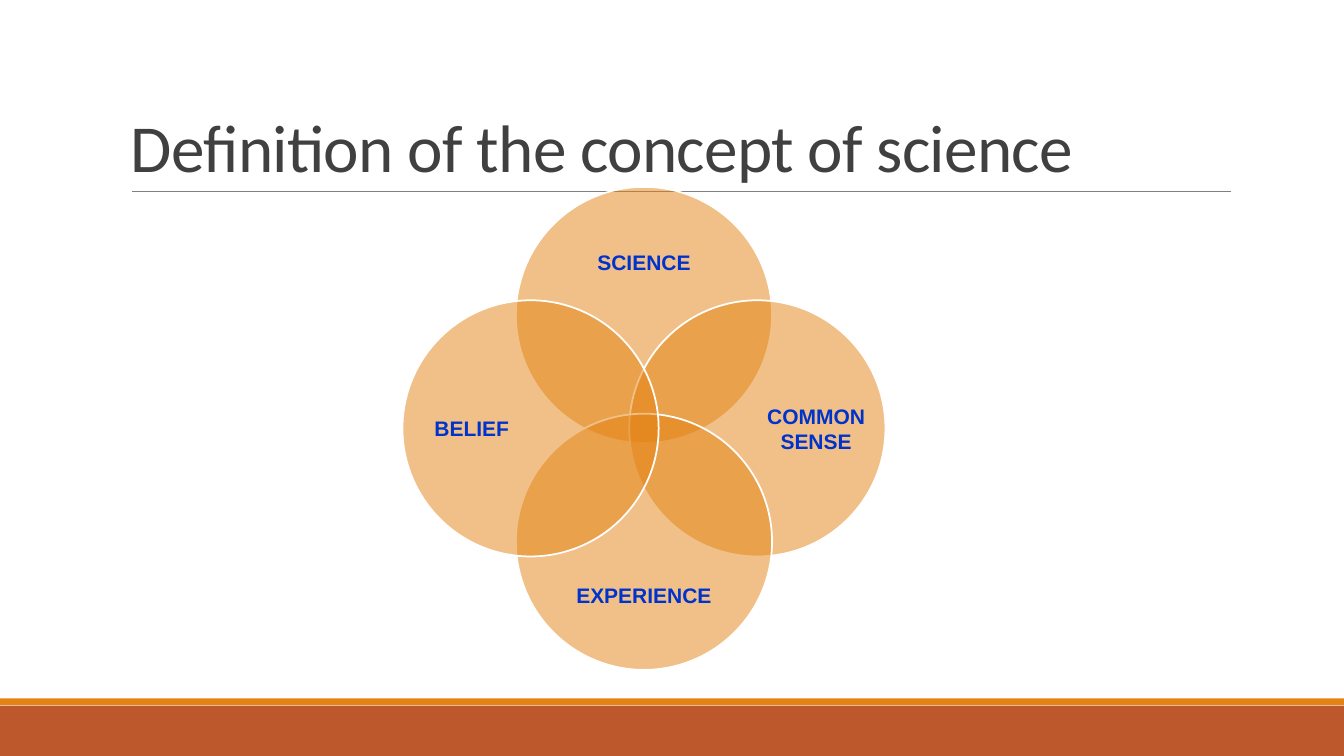
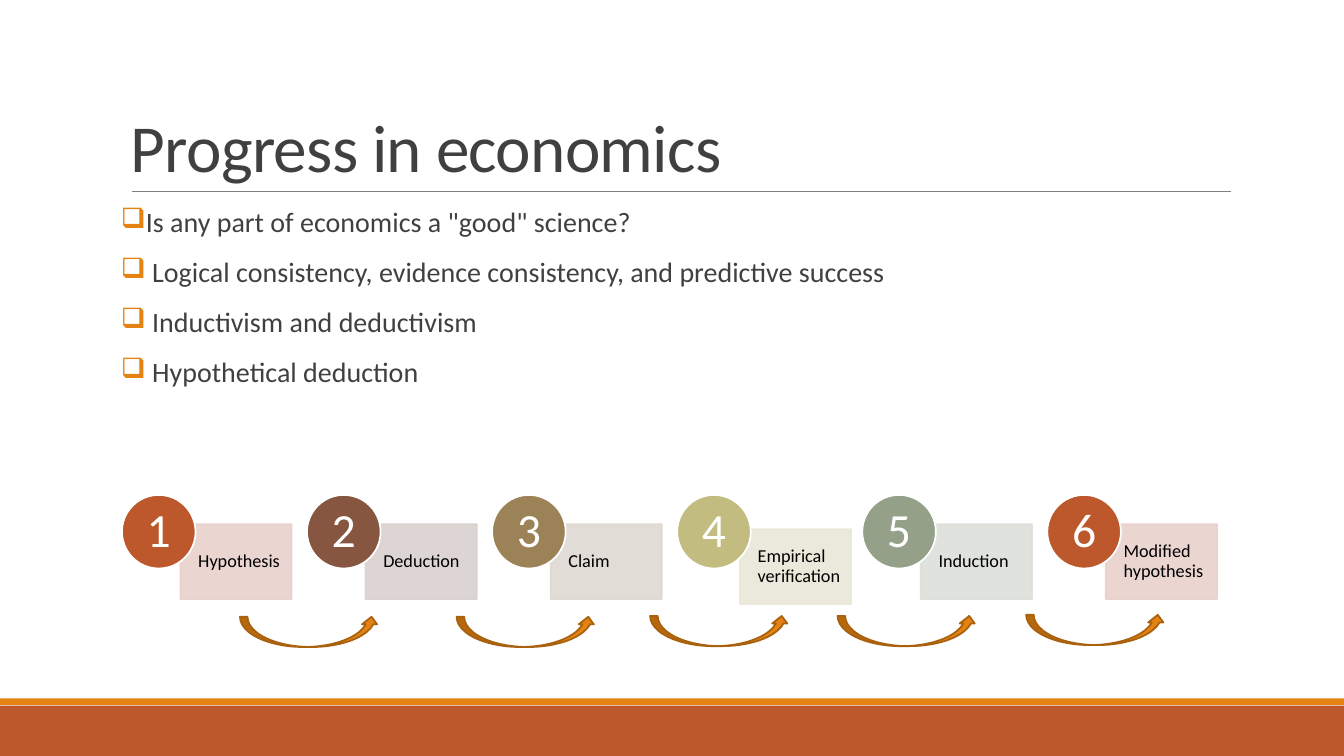
from dataclasses import dataclass

from lxml.etree import SubElement
from pptx import Presentation
from pptx.dml.color import RGBColor
from pptx.enum.shapes import MSO_CONNECTOR as Connector, MSO_SHAPE as Shape
from pptx.enum.text import MSO_ANCHOR as Anchor, PP_ALIGN as Align
from pptx.oxml.ns import qn
from pptx.util import Pt


@dataclass(frozen=True)
class Theme:
    body_font: str = "Calibri"
    label_font: str = "Arial"
    title_size: int = 48
    number_size: int = 34
    body_size: int = 20
    label_size: int = 15
    card_size: int = 13
    orange: str = "E48312"
    rust: str = "BD582C"
    arrow_edge: str = "A9610D"
    rule: str = "808080"
    text: str = "404040"
    label: str = "0033CC"
    black: str = "000000"
    white: str = "FFFFFF"
    outline: float = 1.25


theme = Theme()


def draw(page, kind, box, fill, line=None, opacity=100):
    """Add a preset shape; opacity applies to every part in the fill colour."""
    shape = page.shapes.add_shape(kind, *map(Pt, box))
    shape.shadow.inherit = False
    shape.fill.solid()
    shape.fill.fore_color.rgb = RGBColor.from_string(fill)
    if line:
        shape.line.color.rgb = RGBColor.from_string(line)
        shape.line.width = Pt(theme.outline)
    else:
        shape.line.fill.background()
    if opacity < 100:
        for colour in shape._element.spPr.iter(qn("a:srgbClr")):
            if colour.get("val") == fill:
                SubElement(colour, qn("a:alpha"), val=str(opacity * 1000))
    return shape


def write(shape, lines, size, colour, font=theme.body_font, bold=False, align=Align.LEFT,
          anchor=Anchor.MIDDLE, insets=(0, 0, 0, 0), spacing=0.9):
    """Fill a shape with one paragraph per line and return the paragraphs."""
    frame = shape.text_frame
    frame.word_wrap = True
    frame.vertical_anchor = anchor
    frame.margin_left, frame.margin_top, frame.margin_right, frame.margin_bottom = map(Pt, insets)
    frame.text = "\n".join(lines)
    for para in frame.paragraphs:
        para.alignment = align
        para.line_spacing = spacing
        para.font.name = font
        para.font.size = Pt(size)
        para.font.bold = bold
        para.font.color.rgb = RGBColor.from_string(colour)
    return frame.paragraphs


deck = Presentation()
deck.slide_width, deck.slide_height = Pt(960), Pt(540)

# Bands, rule and title on every page
pages = []
for title in ("Definition of the concept of science", "Progress in economics"):
    page = deck.slides.add_slide(deck.slide_layouts[6])
    draw(page, Shape.RECTANGLE, (0, 504, 960, 36), theme.rust)
    draw(page, Shape.RECTANGLE, (0, 498.8, 960, 4.8), theme.orange)
    rule = page.shapes.add_connector(Connector.STRAIGHT, Pt(94.3), Pt(136.8), Pt(879.2), Pt(136.8))
    rule.line.color.rgb = RGBColor.from_string(theme.rule)
    rule.line.width = Pt(0.5)
    SubElement(rule._element.spPr, qn("a:effectLst"))
    box = page.shapes.add_textbox(Pt(86.4), Pt(22.6), Pt(792), Pt(114.2))
    para, = write(box, [title], theme.title_size, theme.text, anchor=Anchor.BOTTOM,
                  insets=(7.2, 3.6, 7.2, 3.6), spacing=0.85)
    para.runs[0].font._element.set("spc", "-50")
    pages.append(page)
venn_page, progress_page = pages

# Four overlapping circles around one centre
centre_x, centre_y = 460, 306
diameter, circle_offset = 183, 81
venn = [
    # label, direction, label distance, label width, label height
    ("SCIENCE", (0, -1), 119, 140, 58),
    ("COMMON SENSE", (1, 0), 123, 72, 140),
    ("EXPERIENCE", (0, 1), 119, 140, 58),
    ("BELIEF", (-1, 0), 123, 72, 140),
]
for label, (across, down), distance, width, height in venn:
    left = centre_x + across * circle_offset - diameter / 2
    top = centre_y + down * circle_offset - diameter / 2
    draw(venn_page, Shape.OVAL, (left, top, diameter, diameter), theme.orange, theme.white, 50)
    box = venn_page.shapes.add_textbox(Pt(centre_x + across * distance - width / 2),
                                       Pt(centre_y + down * distance - height / 2),
                                       Pt(width), Pt(height))
    write(box, [label], theme.label_size, theme.label, theme.label_font, bold=True,
          align=Align.CENTER, spacing=1.0)

# Bulleted questions
points = [
    'Is any part of economics a "good" science?',
    " Logical consistency, evidence consistency, and predictive success",
    " Inductivism and deductivism",
    " Hypothetical deduction",
]
box = progress_page.shapes.add_textbox(Pt(86.4), Pt(145.4), Pt(792), Pt(190))
for para in write(box, points, theme.body_size, theme.text, anchor=Anchor.TOP,
                  insets=(0, 3.6, 0, 3.6)):
    para.space_before, para.space_after = Pt(12), Pt(2)
    properties = para._p.get_or_add_pPr()
    properties.set("marL", str(Pt(7.2)))
    properties.set("indent", str(-Pt(7.2)))
    SubElement(SubElement(properties, qn("a:buClr")), qn("a:srgbClr"), val=theme.orange)
    SubElement(properties, qn("a:buChar"), char="❑")

# Numbered steps: a card with a badge on its corner
step_left, step_pitch, badge_size = 87.1, 132.2, 52.6
steps = [
    # label, badge colour, card colour, card shift
    ("Hypothesis", theme.rust, "E8D1CD", (0, 0)),
    ("Deduction", "865640", "D9D1CF", (0, 0)),
    ("Claim", "9B8357", "DED9D1", (0, 0)),
    ("Empirical verification", "C2BC80", "E9E7D8", (3, 3.6)),
    ("Induction", "94A088", "DCDFDA", (0, 0)),
    ("Modified hypothesis", theme.rust, "E8D1CD", (0, 0)),
]
for index, (label, badge_colour, card_colour, (shift_x, shift_y)) in enumerate(steps):
    left = step_left + index * step_pitch
    card = draw(progress_page, Shape.RECTANGLE, (left + 41.8 + shift_x, 374.4 + shift_y, 79.4, 53.5),
                card_colour, card_colour, 90)
    write(card, [label], theme.card_size, theme.black, insets=(12.7, 7.2, 6.5, 7.2))
    badge = draw(progress_page, Shape.OVAL, (left, 353.5, badge_size, badge_size),
                 badge_colour, theme.white)
    write(badge, [str(index + 1)], theme.number_size, theme.white, align=Align.CENTER)

# Arrows from each step to the next
for left, top in ((171.4, 440.6), (326.2, 440.6), (464.4, 440), (598.3, 440), (733, 439.2)):
    draw(progress_page, Shape.CURVED_UP_ARROW, (left, top, 99.4, 21.6),
         theme.orange, theme.arrow_edge)

deck.save("out.pptx")
